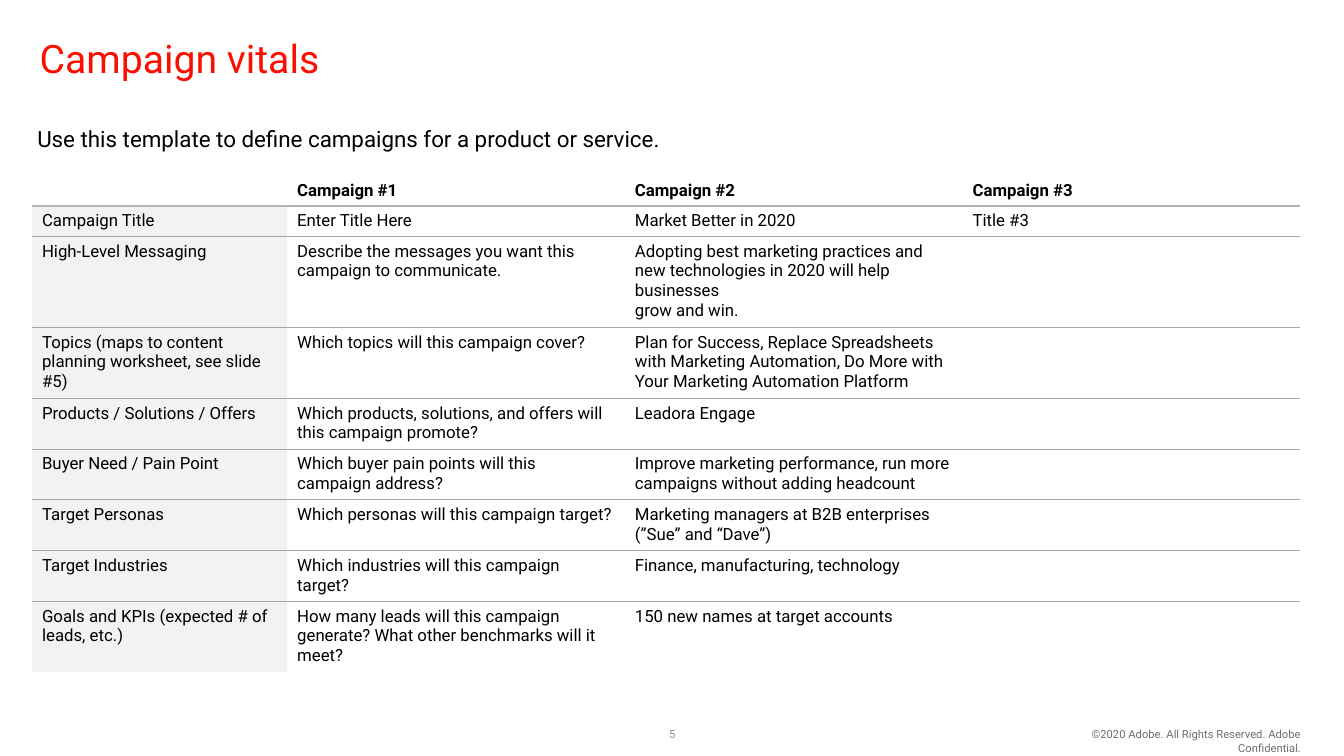
from lxml import etree
from pptx import Presentation
from pptx.dml.color import RGBColor
from pptx.enum.text import MSO_ANCHOR, PP_ALIGN
from pptx.oxml.ns import qn
from pptx.util import Cm, Pt

TOP, MIDDLE = MSO_ANCHOR.TOP, MSO_ANCHOR.MIDDLE
LEFT, CENTER, RIGHT = PP_ALIGN.LEFT, PP_ALIGN.CENTER, PP_ALIGN.RIGHT

# Content
TITLE = "Campaign vitals"
INTRO = "Use this template to define campaigns for a product or service."
PAGE_NUMBER = "5"
COPYRIGHT = "©2020 Adobe. All Rights Reserved. Adobe Confidential."
VITALS = [  # row height in cm, then the four cells
    (0.75, "", "Campaign #1", "Campaign #2", "Campaign #3"),
    (0.75, "Campaign Title", "Enter Title Here", "Market Better in 2020", "Title #3"),
    (2.25, "High-Level Messaging",
     "Describe the messages you want this\ncampaign to communicate.",
     "Adopting best marketing practices and new technologies in 2020 "
     "will help businesses\ngrow and win.", ""),
    (1.75, "Topics (maps to content planning worksheet, see slide #5)",
     "Which topics will this campaign cover?",
     "Plan for Success, Replace Spreadsheets with Marketing Automation, "
     "Do More with Your Marketing Automation Platform", ""),
    (1.28, "Products / Solutions / Offers",
     "Which products, solutions, and offers will\nthis campaign promote?",
     "Leadora Engage", ""),
    (1.27, "Buyer Need / Pain Point",
     "Which buyer pain points will this\ncampaign address?",
     "Improve marketing performance, run more campaigns without adding headcount", ""),
    (1.28, "Target Personas", "Which personas will this campaign target?",
     "Marketing managers at B2B enterprises\n(”Sue” and “Dave”)", ""),
    (1.25, "Target Industries", "Which industries will this campaign target?",
     "Finance, manufacturing, technology", ""),
    (1.75, "Goals and KPIs (expected # of leads, etc.)",
     "How many leads will this campaign generate? What other benchmarks will it meet?",
     "150 new names at target accounts", ""),
]

# Style
FONT = "Roboto"
COLORS = {"title": "FA0F00", "text": "000000", "label": "F2F2F2",
          "header_rule": "B3B3B3", "row_rule": "A6A6A6",
          "copyright": "6E6E6E", "number": "8C8C8C"}
NO_GRID_STYLE = "{2D5ABB26-0587-4C30-8999-92F81FD0307C}"
TABLE_LEFT, TABLE_TOP = 0.81, 4.42
COLUMN_WIDTHS = (6.43, 8.51, 8.51, 8.51)
CELL_SIZE = 12


def write(frame, text, size, color, bold=False, align=LEFT):
    para = frame.paragraphs[0]
    para.alignment = align
    for index, line in enumerate(text.split("\n")):
        if index:
            para.add_line_break()
        span = para.add_run()
        span.text = line
        span.font.name = FONT
        span.font.size = Pt(size)
        span.font.bold = bold
        span.font.color.rgb = RGBColor.from_string(COLORS[color])
    return para


def set_insets(frame, side, edge):
    frame.margin_left = frame.margin_right = Cm(side)
    frame.margin_top = frame.margin_bottom = Cm(edge)


def add_text(page, place, text, size, color, align=LEFT, side=0.25):
    box = page.shapes.add_textbox(*map(Cm, place))
    box.text_frame.word_wrap = True
    set_insets(box.text_frame, side, 0.13)
    write(box.text_frame, text, size, color, align=align)


def add_rule(cell, tag, color, width):
    """Draw one horizontal cell border; borders come before the fill."""
    properties = cell._tc.get_or_add_tcPr()
    line = etree.Element(qn(tag), w=str(Pt(width)))
    fill = etree.SubElement(line, qn("a:solidFill"))
    etree.SubElement(fill, qn("a:srgbClr"), val=COLORS[color])
    properties.insert(len(properties) - 1, line)


def rule_below(row):
    return ("row_rule", 0.5) if row else ("header_rule", 1)


def fill_cell(cell, row, column, text):
    cell.vertical_anchor = MIDDLE if row < 2 else TOP
    set_insets(cell, 0.25, 0.13)
    if text:
        write(cell.text_frame, text, CELL_SIZE, "text", bold=row == 0)
    else:
        para = cell.text_frame.paragraphs[0]
        etree.SubElement(para._p, qn("a:endParaRPr"), sz=str(CELL_SIZE * 100))
    if row and column == 0:
        cell.fill.solid()
        cell.fill.fore_color.rgb = RGBColor.from_string(COLORS["label"])
    else:
        cell.fill.background()
    if row:
        add_rule(cell, "a:lnT", *rule_below(row - 1))
    if row < len(VITALS) - 1:
        add_rule(cell, "a:lnB", *rule_below(row))


def add_vitals(page):
    heights = [entry[0] for entry in VITALS]
    frame = page.shapes.add_table(
        len(VITALS), len(COLUMN_WIDTHS), Cm(TABLE_LEFT), Cm(TABLE_TOP),
        Cm(sum(COLUMN_WIDTHS)), Cm(sum(heights)))
    table = frame.table
    table.horz_banding = False
    table._tbl.tblPr.find(qn("a:tableStyleId")).text = NO_GRID_STYLE
    for column, width in zip(table.columns, COLUMN_WIDTHS):
        column.width = Cm(width)
    for row, (height, *texts) in enumerate(VITALS):
        table.rows[row].height = Cm(height)
        for column, text in enumerate(texts):
            fill_cell(table.cell(row, column), row, column, text)


def main():
    deck = Presentation()
    deck.slide_width, deck.slide_height = Cm(33.87), Cm(19.05)
    page = deck.slides.add_slide(deck.slide_layouts[5])

    # Title
    title = page.shapes.title
    title.left, title.top, title.width, title.height = map(Cm, (0.87, 0.87, 31.93, 1.8))
    title.text_frame.vertical_anchor = TOP
    title.text_frame.word_wrap = True
    set_insets(title.text_frame, 0.13, 0.13)
    write(title.text_frame, TITLE, 28, "title").line_spacing = 0.9

    # Introduction and table
    add_text(page, (0.81, 3.02, 32, 1.63), INTRO, 16, "text", side=0.13)
    add_vitals(page)

    # Footer
    add_text(page, (16.38, 18.21, 1.12, 0.74), PAGE_NUMBER, 8, "number", CENTER)
    add_text(page, (25.83, 18.21, 7.21, 0.76), COPYRIGHT, 8, "copyright", RIGHT)
    deck.save("out.pptx")


if __name__ == "__main__":
    main()
